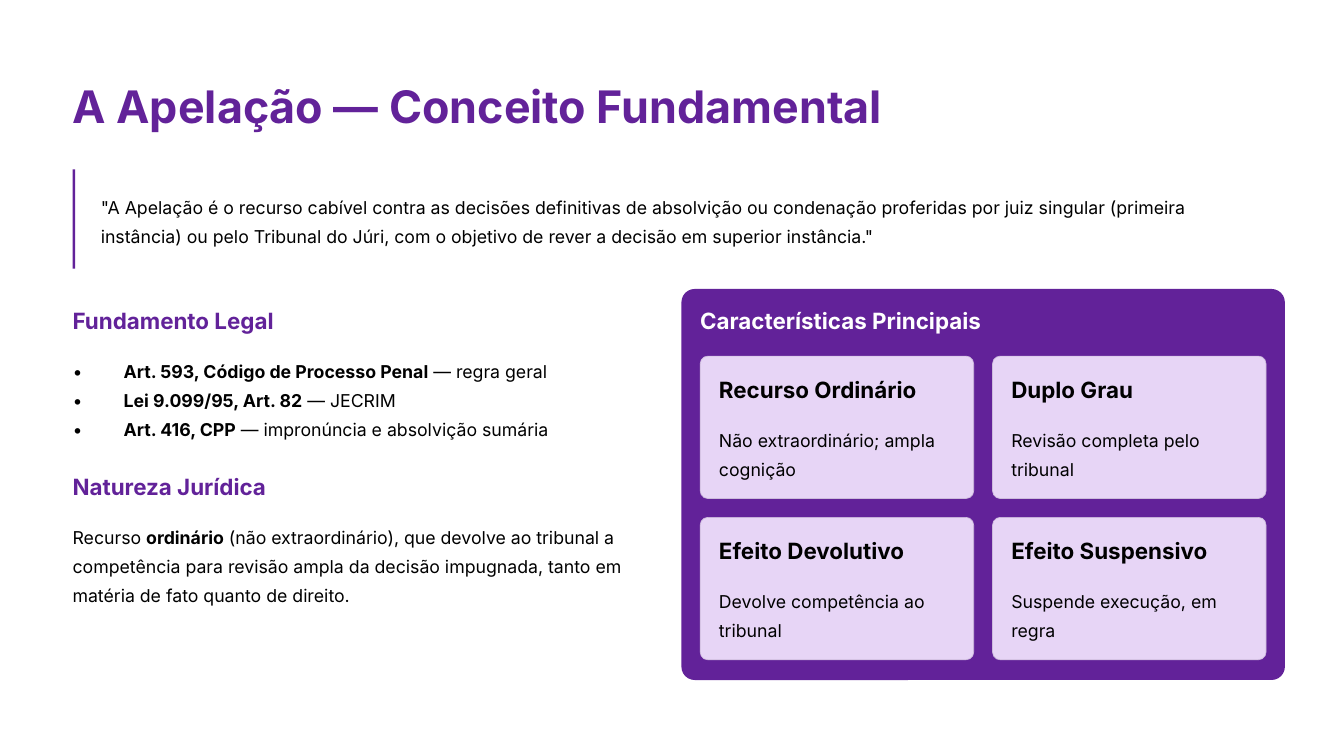
from lxml import etree
from pptx import Presentation, util as u
from pptx.dml.color import RGBColor
from pptx.enum import shapes, text
from pptx.oxml.ns import qn

WIDE = 10
HIGH = WIDE * 9 / 16
FACE = "Inter"
HUES = {"plum": "622299", "lilac": "E7D5F6", "edge": "CDBBDC",
        "ink": "000000", "white": "FFFFFF"}

# Size, bold and line spacing in points
STYLES = {
    "title": {"size": 24, "bold": True, "lead": 30.5},
    "head": {"size": 12, "bold": True, "lead": 15},
    "body": {"size": 9.5, "bold": False, "lead": 15.5},
}

# Double asterisks enclose bold words
TITLE = "A Apelação — Conceito Fundamental"
QUOTE = ('"A Apelação é o recurso cabível contra as decisões definitivas de '
         'absolvição ou condenação proferidas por juiz singular (primeira '
         'instância) ou pelo Tribunal do Júri, com o objetivo de rever a '
         'decisão em superior instância."')
LAWS = ["**Art. 593, Código de Processo Penal** — regra geral",
        "**Lei 9.099/95, Art. 82** — JECRIM",
        "**Art. 416, CPP** — impronúncia e absolvição sumária"]
NATURE = ["Recurso **ordinário** (não extraordinário), que devolve ao tribunal "
          "a competência para revisão ampla da decisão impugnada, tanto em "
          "matéria de fato quanto de direito."]
PARTS = [("Fundamento Legal", LAWS, 2.28, 0.75, True),
         ("Natureza Jurídica", NATURE, 3.51, 0.65, False)]
PANEL = "Características Principais"
CARDS = [("Recurso Ordinário", "Não extraordinário; ampla cognição"),
         ("Duplo Grau", "Revisão completa pelo tribunal"),
         ("Efeito Devolutivo", "Devolve competência ao tribunal"),
         ("Efeito Suspensivo", "Suspende execução, em regra")]

LEFT, RIGHT = 0.54, 9.56
GAP, PAD = 0.14, 0.14
HEAD, STEP = 0.21, 0.35     # heading height, heading top to body top
COL, INDENT = 4.29, 0.38
BOX = (5.07, 2.15, RIGHT - 5.07, 2.91)
GRID = 2.65                 # top of the cards
CARD_W = (BOX[2] - 3 * GAP) / 2
CARD_H = 1.06

deck = Presentation()
deck.slide_width, deck.slide_height = u.Inches(WIDE), u.Inches(HIGH)
slide = deck.slides.add_slide(deck.slide_layouts[6])


def tint(name):
    return RGBColor.from_string(HUES[name])


def block(box, fill, kind="RECTANGLE", bend=None, line=None):
    shape = slide.shapes.add_shape(getattr(shapes.MSO_SHAPE, kind),
                                   *map(u.Inches, box))
    shape.shadow.inherit = False
    shape.fill.solid()
    shape.fill.fore_color.rgb = tint(fill)
    if bend:
        shape.adjustments[0] = bend
    if line:
        shape.line.color.rgb = tint(line)
        shape.line.width = u.Pt(0.38)
    else:
        shape.line.fill.background()


def dot(para):
    """Give the paragraph a bullet with a hanging indent."""
    props = para._p.get_or_add_pPr()
    props.set("marL", str(u.Inches(INDENT)))
    props.set("indent", str(-u.Inches(INDENT)))
    etree.SubElement(props, qn("a:buFont")).set("typeface", FACE)
    etree.SubElement(props, qn("a:buChar")).set("char", "•")


def write(box, lines, style, hue="ink", wrap=True, dots=False):
    frame = slide.shapes.add_textbox(*map(u.Inches, box)).text_frame
    form = {"word_wrap": wrap, "margin_left": 0, "margin_top": 0,
            "margin_right": 0, "margin_bottom": 0,
            "vertical_anchor": text.MSO_ANCHOR.TOP}
    for key, val in form.items():
        setattr(frame, key, val)
    look = STYLES[style]
    for i, line in enumerate(lines):
        para = frame.add_paragraph() if i else frame.paragraphs[0]
        if dots:
            dot(para)
        para.line_spacing = u.Pt(look["lead"])
        for j, bit in enumerate(line.split("**")):
            if not bit:
                continue
            run = para.add_run()
            run.text = bit
            font = {"name": FACE, "size": u.Pt(look["size"]),
                    "bold": look["bold"] or j % 2 == 1}
            for key, val in font.items():
                setattr(run.font, key, val)
            run.font.color.rgb = tint(hue)


def head(x, y, words, hue, wide=1.7):
    write((x, y, wide, HEAD), [words], "head", hue, wrap=False)


write((LEFT, 0.56, 6.13, 0.42), [TITLE], "title", "plum", wrap=False)
write((0.75, 1.41, 8.71, 0.43), [QUOTE], "body")
block((LEFT, 1.26, 0.02, 0.74), "plum")

for name, lines, top, high, dots in PARTS:
    head(LEFT, top, name, "plum")
    write((LEFT, top + STEP, COL, high), lines, "body", dots=dots)

block(BOX, "plum", "ROUNDED_RECTANGLE", 0.034)
head(BOX[0] + GAP, PARTS[0][2], PANEL, "white", 2.13)

for i, (name, note) in enumerate(CARDS):
    row, col = divmod(i, 2)
    x = BOX[0] + GAP + col * (CARD_W + GAP)
    y = GRID + row * (CARD_H + GAP)
    block((x, y, CARD_W, CARD_H), "lilac", "ROUNDED_RECTANGLE", 0.054, "edge")
    head(x + PAD, y + PAD, name, "ink")
    write((x + PAD, y + PAD + STEP, CARD_W - 2 * PAD, 0.43), [note], "body")

deck.save("out.pptx")
